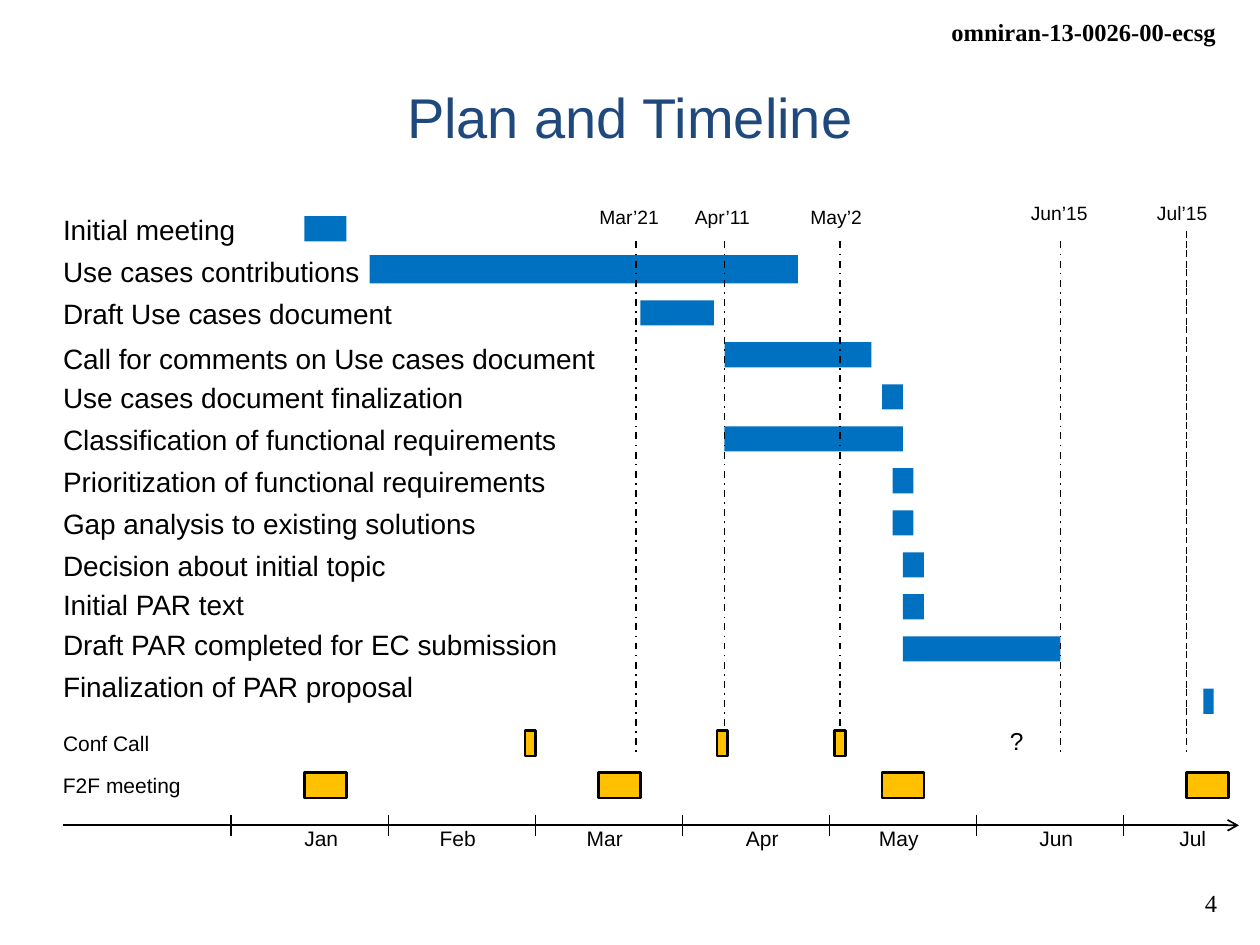
from lxml import etree
from pptx import Presentation
from pptx.dml.color import RGBColor
from pptx.enum.dml import MSO_LINE
from pptx.enum.shapes import MSO_CONNECTOR, MSO_SHAPE
from pptx.enum.text import MSO_ANCHOR, MSO_AUTO_SIZE, PP_ALIGN
from pptx.oxml.ns import qn
from pptx.util import Emu, Pt

LEFT, CENTER, RIGHT = PP_ALIGN.LEFT, PP_ALIGN.CENTER, PP_ALIGN.RIGHT
TOP, MIDDLE = MSO_ANCHOR.TOP, MSO_ANCHOR.MIDDLE
GROW, NO_FIT = MSO_AUTO_SIZE.SHAPE_TO_FIT_TEXT, MSO_AUTO_SIZE.NONE
RECT, STRAIGHT = MSO_SHAPE.RECTANGLE, MSO_CONNECTOR.STRAIGHT
DASH_DOT = MSO_LINE.DASH_DOT

BLACK, NAVY, BLUE, AMBER = "000000", "1F497D", "0070C0", "FFC000"
SANS, SERIF = "Arial", "Times New Roman"

MARGIN = 60
BAR_HEIGHT = 24
ROW_TOP, ROW_STEP = 206, 40
CALL_TOP, MEETING_TOP = 696, 736
AXIS = 786
MONTH_WIDTH = 48

# label, label top, bar left, bar width
TASKS = [
    ("Initial meeting", 202, 290, 40),
    ("Use cases contributions", 242, 352, 408),
    ("Draft Use cases document", 282, 610, 70),
    ("Call for comments on Use cases document", 325, 690, 140),
    ("Use cases document finalization", 362, 840, 20),
    ("Classification of functional requirements", 402, 690, 170),
    ("Prioritization of functional requirements", 442, 850, 20),
    ("Gap analysis to existing solutions", 482, 850, 20),
    ("Decision about initial topic", 522, 860, 20),
    ("Initial PAR text", 560, 860, 20),
    ("Draft PAR completed for EC submission", 598, 860, 150),
    ("Finalization of PAR proposal", 638, 1146, 10),
]
# row: bar top and height, where they leave the regular rows
ODD_BARS = {1: (243, 27), 11: (656, BAR_HEIGHT)}

# label, label left, label top, label width, line position
MILESTONES = [
    ("Mar’21", 559, 190, 82, 606),
    ("Apr’11", 650, 190, 79, 690),
    ("May’2", 760, 190, 73, 800),
    ("Jun’15", 970, 186, 79, 1010),
    ("Jul’15", 1090, 186, 73, 1130),
]
MONTH_CENTERS = {"Jan": 306, "Feb": 436, "Mar": 576, "Apr": 726,
                 "May": 856, "Jun": 1006, "Jul": 1136}
TICKS = [220] + [370 + 140 * i for i in range(6)]
CALLS = [500, 683, 795]
MEETINGS = [290, 570, 840, 1130]


def px(n):
    """Length in EMU, at 120 px to the inch."""
    return Emu(n * 7620)


def color(value):
    return RGBColor.from_string(value)


def write(tf, text, size=16, font=SANS, fill=BLACK, bold=False, align=LEFT):
    p = tf.paragraphs[0]
    p.alignment = align
    r = p.add_run()
    r.text = text
    r.font.size = Pt(size)
    r.font.name = font
    r.font.bold = bold
    r.font.color.rgb = color(fill)


class Chart:
    """Draws the timeline's elements on one slide."""

    def __init__(self, slide):
        self.slide = slide
        self.shapes = slide.shapes

    def title(self, text, x, y, w, h):
        s = self.shapes.title
        s.left, s.top, s.width, s.height = px(x), px(y), px(w), px(h)
        tf = s.text_frame
        tf.vertical_anchor = MIDDLE
        tf.auto_size = NO_FIT
        write(tf, text, size=32, fill=NAVY, align=CENTER)

    def text(self, text, x, y, w, h, inset=True, **fmt):
        tf = self.shapes.add_textbox(px(x), px(y), px(w), px(h)).text_frame
        tf.word_wrap = False
        tf.auto_size = GROW
        tf.vertical_anchor = TOP
        if not inset:
            tf.margin_left = tf.margin_right = 0
            tf.margin_top = tf.margin_bottom = 0
        write(tf, text, **fmt)

    def bar(self, x, y, w, h=BAR_HEIGHT, fill=BLUE, outline=None):
        s = self.shapes.add_shape(RECT, px(x), px(y), px(w), px(h))
        s.shadow.inherit = False
        s.fill.solid()
        s.fill.fore_color.rgb = color(fill)
        if outline:
            s.line.color.rgb = color(outline)
            s.line.width = Pt(1.5)
        else:
            s.line.fill.background()
        return s

    def event(self, x, y, w):
        return self.bar(x, y, w, fill=AMBER, outline=BLACK)

    def line(self, x1, y1, x2, y2, dash=None, arrow=False):
        s = self.shapes.add_connector(STRAIGHT, px(x1), px(y1), px(x2), px(y2))
        s.line.color.rgb = color(BLACK)
        s.line.width = Pt(1)
        if dash:
            s.line.dash_style = dash
        sp_pr = s._element.spPr
        if arrow:
            etree.SubElement(sp_pr.find(qn("a:ln")), qn("a:tailEnd"), type="arrow")
        etree.SubElement(sp_pr, qn("a:effectLst"))
        return s


def main():
    prs = Presentation()
    prs.slide_width, prs.slide_height = px(1200), px(900)
    chart = Chart(prs.slides.add_slide(prs.slide_layouts[5]))

    chart.text("omniran-13-0026-00-ecsg", 892, 10, 278, 41,
               size=14, font=SERIF, bold=True, align=RIGHT)
    chart.text("4", 1120, 840, 51, 41, size=14, font=SERIF, align=RIGHT)
    chart.title("Plan and Timeline", MARGIN, 36, 1080, 150)

    chart.line(MARGIN, AXIS, 1180, AXIS, arrow=True)
    for x in TICKS:
        chart.line(x, AXIS - 10, x, AXIS + 10)
    for month, x in MONTH_CENTERS.items():
        chart.text(month, x - MONTH_WIDTH // 2, AXIS, MONTH_WIDTH, 24,
                   inset=False, size=12, align=CENTER)

    for row, (label, top, x, w) in enumerate(TASKS):
        chart.text(label, MARGIN, top, 515, 32, inset=False)
        y, h = ODD_BARS.get(row, (ROW_TOP + ROW_STEP * row, BAR_HEIGHT))
        chart.bar(x, y, w, h)

    lines = {}
    for label, left, top, w, x in MILESTONES:
        chart.text(label, left, top, w, 35, size=11)
        lines[label] = chart.line(x, 230, x, 720, dash=DASH_DOT)
    chart.line(1130, 220, 1130, 710, dash=DASH_DOT)

    chart.text("Conf Call", MARGIN, CALL_TOP, 90, 24, inset=False, size=12)
    calls = [chart.event(x, CALL_TOP, 10) for x in CALLS]
    lines["May’2"].end_connect(calls[-1], 2)
    chart.text("?", 950, 686, 37, 41, size=14)
    chart.text("F2F meeting", MARGIN, MEETING_TOP, 120, 24, inset=False, size=12)
    for x in MEETINGS:
        chart.event(x, MEETING_TOP, 40)

    prs.save("out.pptx")


if __name__ == "__main__":
    main()
